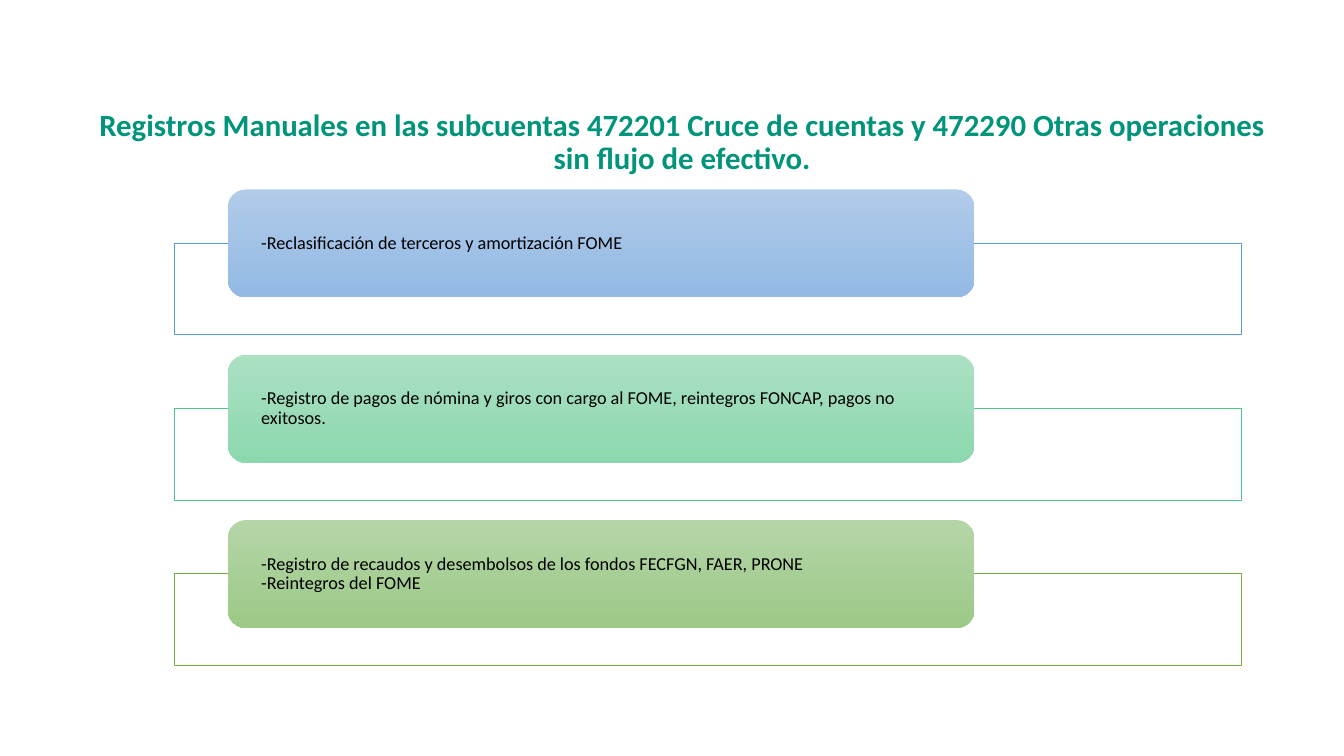
import pptx
import pptx.util
import pptx.dml.color
import pptx.enum.shapes
import pptx.enum.text

Inches = pptx.util.Inches
SHAPES = pptx.enum.shapes.MSO_SHAPE
ALIGN = pptx.enum.text.PP_ALIGN
ANCHOR = pptx.enum.text.MSO_ANCHOR

# Frame line colour, gradient top and bottom, lines of text
RECORDS = [
    ("5B9BD5", "B1CBE9", "93B9E4",
     ["-Reclasificación de terceros y amortización FOME"]),
    ("4DC58D", "ABE0C3", "8CD8AF",
     ["-Registro de pagos de nómina y giros con cargo al FOME, "
      "reintegros FONCAP, pagos no exitosos."]),
    ("70AD47", "B5D5A7", "9CC987",
     ["-Registro de recaudos y desembolsos de los fondos FECFGN, FAER, PRONE",
      "-Reintegros del FOME"]),
]


def color(value):
    return pptx.dml.color.RGBColor.from_string(value)


def add_span(para, text, size, value, bold=False):
    span = para.add_run()
    span.text = text
    span.font.name = "Calibri"
    span.font.size = pptx.util.Pt(size)
    span.font.bold = bold
    span.font.color.rgb = color(value)


def add_title(page, left, top, width, height):
    box = page.shapes.add_textbox(Inches(left), Inches(top), Inches(width), Inches(height))
    box.text_frame.word_wrap = True
    para = box.text_frame.paragraphs[0]
    para.alignment = ALIGN.CENTER
    para.line_spacing = 0.9
    add_span(para, "Registros Manuales en las subcuentas 472201 Cruce de cuentas y "
                   "472290 Otras operaciones sin flujo de efectivo.", 22, "00947A", True)


def add_record(page, left, top, width, record):
    outline, light, dark, lines = record

    # Outlined frame behind the card
    frame = page.shapes.add_shape(SHAPES.RECTANGLE, Inches(left), Inches(top + 0.53),
                                  Inches(width), Inches(0.91))
    frame.shadow.inherit = False
    frame.fill.solid()
    frame.fill.fore_color.rgb = color("FFFFFF")
    frame.line.color.rgb = color(outline)
    frame.line.width = pptx.util.Pt(0.5)

    # Rounded card, light at the top and dark at the bottom
    card = page.shapes.add_shape(SHAPES.ROUNDED_RECTANGLE, Inches(left + width * 0.05),
                                 Inches(top), Inches(width * 0.7), Inches(1.07))
    card.shadow.inherit = False
    card.line.fill.background()
    card.fill.gradient()
    card.fill.gradient_angle = 270
    for stop, value in zip(card.fill.gradient_stops, (light, dark)):
        stop.color.rgb = color(value)
        stop.position = 0 if value == light else 1

    # Card text
    frame_text = card.text_frame
    frame_text.word_wrap = True
    frame_text.vertical_anchor = ANCHOR.MIDDLE
    frame_text.margin_left = frame_text.margin_right = Inches(0.28)
    frame_text.margin_top = frame_text.margin_bottom = 0
    para = frame_text.paragraphs[0]
    para.alignment = ALIGN.LEFT
    para.line_spacing = 0.9
    for index, line in enumerate(lines):
        if index:
            para.add_line_break()
        add_span(para, line, 13, "000000")


def main():
    deck = pptx.Presentation()
    deck.slide_width = Inches(13.33)
    deck.slide_height = Inches(7.5)
    page = deck.slides.add_slide(deck.slide_layouts[6])
    add_title(page, 0.75, 1.04, 12.03, 1.1)
    for index, record in enumerate(RECORDS):
        add_record(page, 1.73, 1.88 + index * 1.64, 10.58, record)
    deck.save("out.pptx")


if __name__ == "__main__":
    main()
